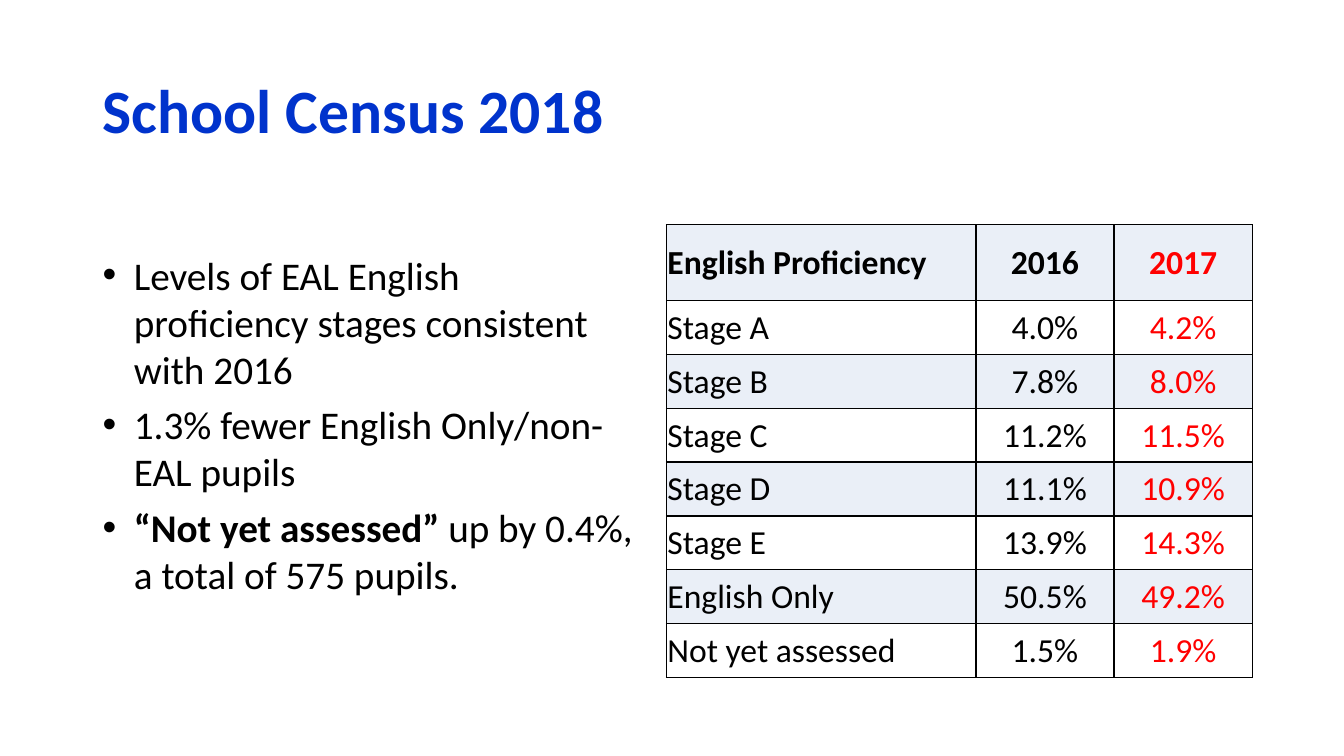
from lxml import etree
from pptx import Presentation
from pptx import util as u
from pptx.dml.color import RGBColor
from pptx.enum import text
from pptx.oxml.ns import qn

TITLE = "School Census 2018"
POINTS = [  # each point is a list of (words, bold)
    [("Levels of EAL English proficiency stages consistent with 2016", False)],
    [("1.3% fewer English Only/non-EAL pupils", False)],
    [("“Not yet assessed” ", True), ("up by 0.4%, a total of 575 pupils.", False)],
]
ROWS = [
    ("English Proficiency", "2016", "2017"),
    ("Stage A", "4.0%", "4.2%"),
    ("Stage B", "7.8%", "8.0%"),
    ("Stage C", "11.2%", "11.5%"),
    ("Stage D", "11.1%", "10.9%"),
    ("Stage E", "13.9%", "14.3%"),
    ("English Only", "50.5%", "49.2%"),
    ("Not yet assessed", "1.5%", "1.9%"),
]
WIDTHS = (3.07, 1.37, 1.37)
HEAD, ROW = 0.75, 0.535
BLUE, BLACK, RED = "0033CC", "000000", "FF0000"
BANDS = ("EAEFF7", "FFFFFF")
LEFT, MID = text.PP_ALIGN.LEFT, text.PP_ALIGN.CENTER


def color(code):
    return RGBColor.from_string(code)


def write(para, words, size, ink=BLACK, bold=False, align=LEFT):
    para.alignment = align
    run = para.add_run()
    run.text = words
    font = run.font
    font.name, font.size, font.bold = "Calibri", u.Pt(size), bold
    font.color.rgb = color(ink)


def bullet(para):
    props = para._p.get_or_add_pPr()
    props.set("marL", str(u.Inches(0.31)))
    props.set("indent", str(-u.Inches(0.31)))
    etree.SubElement(props, qn("a:buFont"), typeface="Arial")
    etree.SubElement(props, qn("a:buChar"), char="•")


def border(cell):
    props = cell._tc.get_or_add_tcPr()
    for spot, side in enumerate(("a:lnL", "a:lnR", "a:lnT", "a:lnB")):
        line = etree.Element(qn(side), w=str(u.Pt(1)))
        fill = etree.SubElement(line, qn("a:solidFill"))
        etree.SubElement(fill, qn("a:srgbClr"), val=BLACK)
        props.insert(spot, line)


def add_title(slide):
    title = slide.shapes.title
    title.left, title.top = u.Inches(0.92), u.Inches(0.4)
    title.width, title.height = u.Inches(11.5), u.Inches(1.45)
    title.text_frame.vertical_anchor = text.MSO_ANCHOR.MIDDLE
    para = title.text_frame.paragraphs[0]
    para.line_spacing = 0.9
    write(para, TITLE, 44, BLUE, True)


def add_points(slide):
    box = slide.shapes.add_textbox(
        u.Inches(0.92), u.Inches(2.44), u.Inches(5.53), u.Inches(3.95))
    frame = box.text_frame
    frame.word_wrap = True
    for i, point in enumerate(POINTS):
        para = frame.add_paragraph() if i else frame.paragraphs[0]
        para.space_after = u.Pt(6)
        bullet(para)
        for words, bold in point:
            write(para, words, 28, bold=bold)


def add_grid(slide):
    high = HEAD + ROW * (len(ROWS) - 1)
    table = slide.shapes.add_table(
        len(ROWS), len(WIDTHS), u.Inches(6.61), u.Inches(2.23),
        u.Inches(sum(WIDTHS)), u.Inches(high)).table
    for col, width in zip(table.columns, WIDTHS):
        col.width = u.Inches(width)
    for r, row in enumerate(ROWS):
        table.rows[r].height = u.Inches(ROW if r else HEAD)
        for c, words in enumerate(row):
            cell = table.cell(r, c)
            cell.margin_left = cell.margin_right = cell.margin_top = u.Inches(0.01)
            cell.margin_bottom = 0
            cell.vertical_anchor = text.MSO_ANCHOR.MIDDLE
            cell.fill.solid()
            cell.fill.fore_color.rgb = color(BANDS[r % 2])
            border(cell)
            write(cell.text_frame.paragraphs[0], words, 24,
                  RED if c == 2 else BLACK, r == 0, MID if c else LEFT)


def main():
    deck = Presentation()
    deck.slide_width, deck.slide_height = u.Inches(13.33), u.Inches(7.5)
    slide = deck.slides.add_slide(deck.slide_layouts[5])
    add_title(slide)
    add_grid(slide)
    add_points(slide)
    deck.save("out.pptx")


if __name__ == "__main__":
    main()
